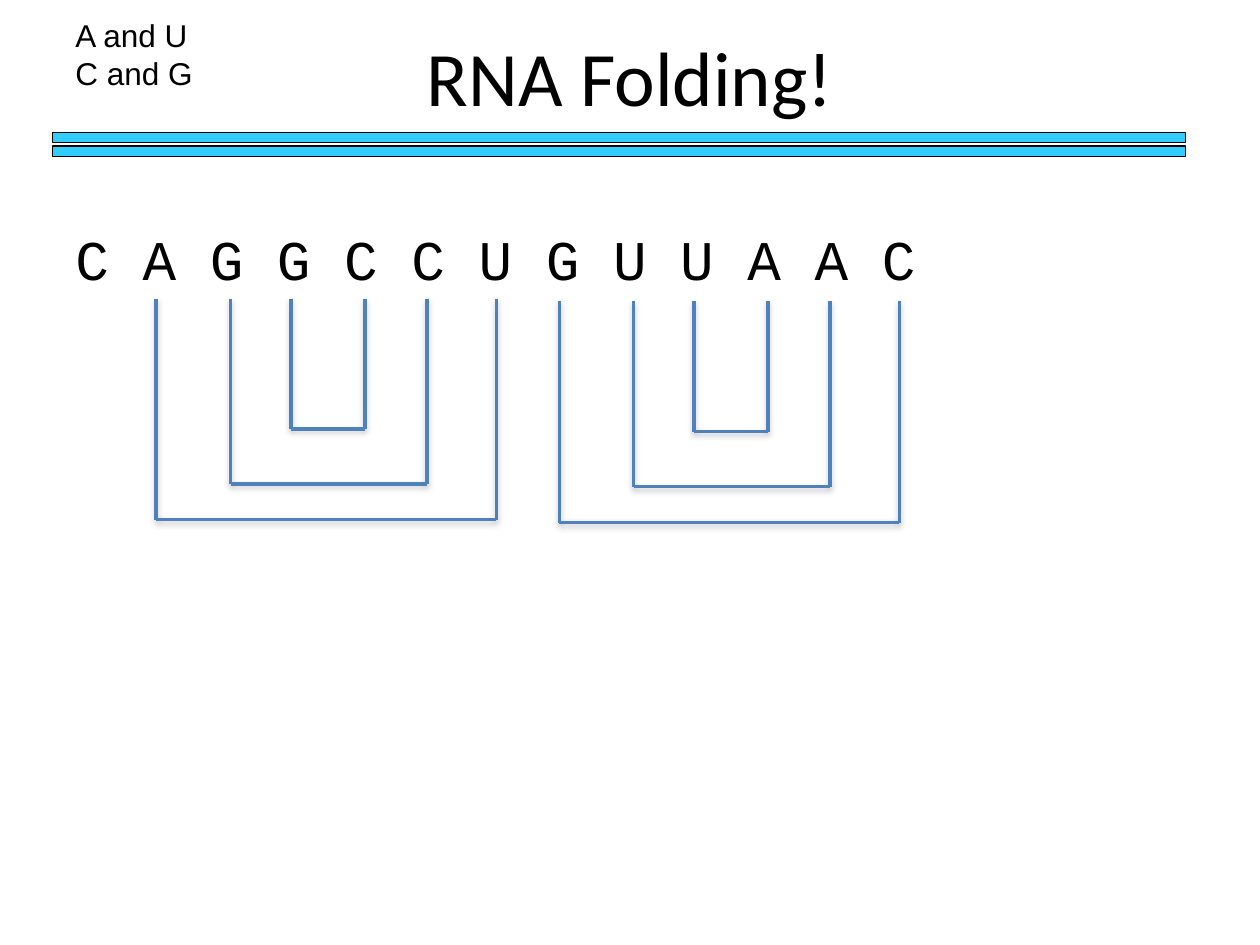
from lxml import etree
from pptx import Presentation
from pptx.dml.color import RGBColor
from pptx.enum.shapes import MSO_CONNECTOR as CONN, MSO_SHAPE as SHAPE
from pptx.enum.text import MSO_ANCHOR as ANCHOR, PP_ALIGN as ALIGN
from pptx.util import Pt

# Content (all lengths in points)
TITLE = "RNA Folding!"
PAIRS = ["A and U", "C and G"]
BASES = "C A G G C C U G U U A A C"
BAR_TOPS = [75.6, 83.5]
HAIRPINS = [(0, 0), (230.3, 1.6)]  # shift of each hairpin: x, y
BONDS = [(89.3, 283.7, 297), (131.8, 244, 276.5), (166.3, 208.7, 245)]  # left, right, bottom
BOND_TOP = 170.6

SHADOW = """<a:effectLst xmlns:a="http://schemas.openxmlformats.org/drawingml/2006/main">
<a:outerShdw blurRad="40000" dist="20000" dir="5400000" rotWithShape="0">
<a:srgbClr val="808080"><a:alpha val="38000"/></a:srgbClr></a:outerShdw></a:effectLst>"""


def color(hex_value):
    return RGBColor.from_string(hex_value)


def format_text(tf, font, size):
    for p in tf.paragraphs:
        for r in p.runs:
            r.font.name, r.font.size = font, Pt(size)
            r.font.color.rgb = color("000000")


def add_text(lines, left, top, width, height, font, size):
    tf = s.shapes.add_textbox(Pt(left), Pt(top), Pt(width), Pt(height)).text_frame
    tf.word_wrap = False
    tf.text = "\n".join(lines)
    format_text(tf, font, size)


def add_line(x1, y1, x2, y2):
    line = s.shapes.add_connector(CONN.STRAIGHT, Pt(x1), Pt(y1), Pt(x2), Pt(y2))
    line.line.color.rgb = color("4F81BD")
    line.line.width = Pt(2)
    line._element.spPr.append(etree.fromstring(SHADOW))


prs = Presentation()
prs.slide_width, prs.slide_height = Pt(720), Pt(540)
s = prs.slides.add_slide(prs.slide_layouts[5])

# Title
title = s.shapes.title
title.left, title.top, title.width, title.height = Pt(36), Pt(-1.5), Pt(648), Pt(90)
tf = title.text_frame
tf.text = TITLE
tf.vertical_anchor = ANCHOR.MIDDLE
tf.paragraphs[0].alignment = ALIGN.CENTER
format_text(tf, "Calibri", 44)

# Double rule under the title
for top in BAR_TOPS:
    sp = s.shapes.add_shape(SHAPE.RECTANGLE, Pt(30), Pt(top), Pt(647.3), Pt(5.8))
    sp.shadow.inherit = False
    sp.fill.solid()
    sp.fill.fore_color.rgb = color("33CCFF")
    sp.line.color.rgb = color("000000")
    sp.line.width = Pt(0.75)

# Base sequence
add_text([BASES], 36, 124.6, 499, 46, "Courier New", 32)

# Bonds: two legs and a base for each pair
for dx, dy in HAIRPINS:
    for left, right, bottom in BONDS:
        x1, x2, y1, y2 = left + dx, right + dx, BOND_TOP + dy, bottom + dy
        add_line(x1, y1, x1, y2)
        add_line(x2, y1, x2, y2)
        add_line(x1, y2, x2, y2)

# Pairing rules
add_text(PAIRS, 36, 5.8, 83.5, 51, "Arial", 18)

prs.save("out.pptx")
